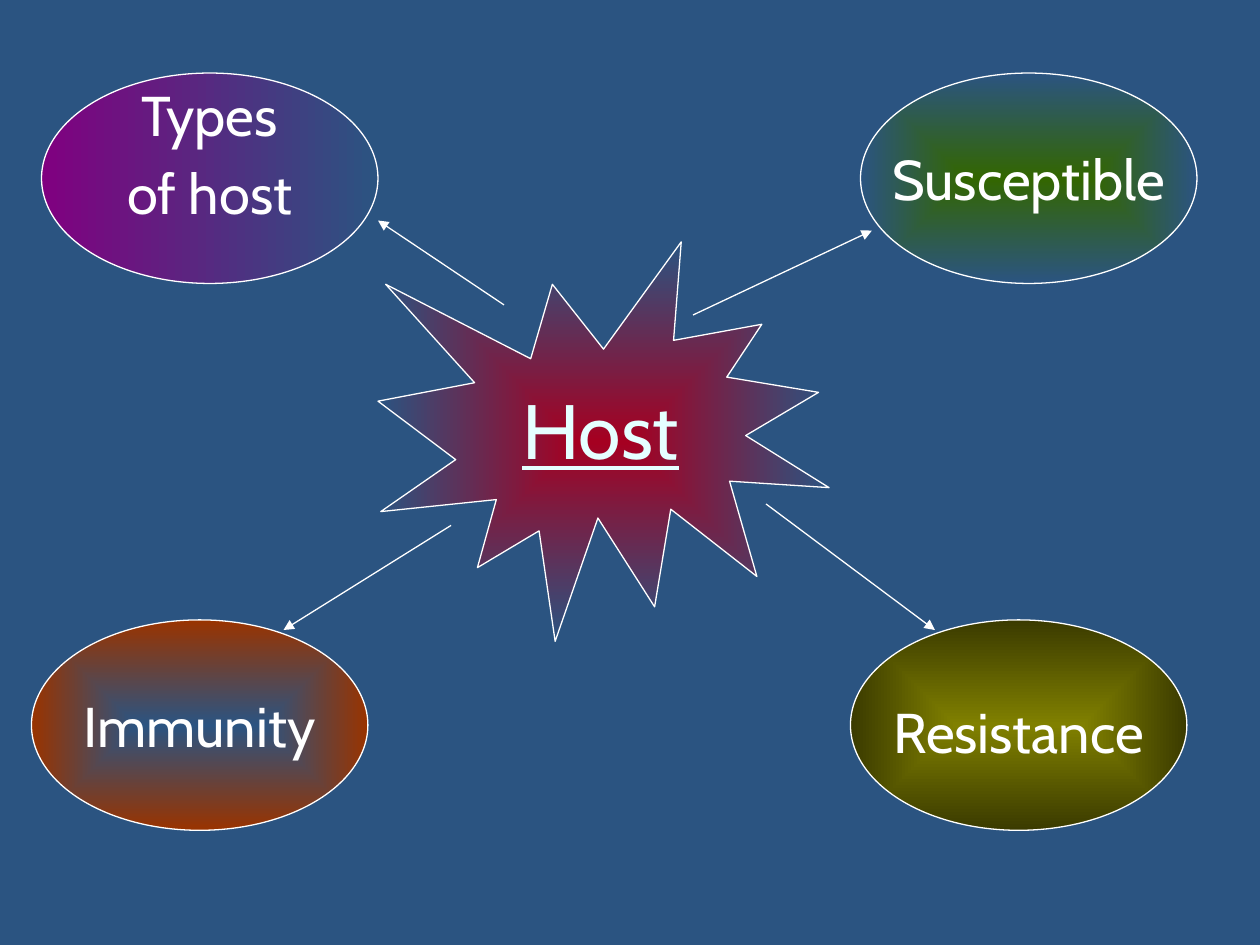
from dataclasses import dataclass

import lxml.etree
import pptx
import pptx.dml.color
import pptx.enum.shapes
import pptx.enum.text
import pptx.oxml
import pptx.oxml.ns
import pptx.util

Inches = pptx.util.Inches
Pt = pptx.util.Pt
SHAPE = pptx.enum.shapes.MSO_SHAPE
qn = pptx.oxml.ns.qn


def rgb(value):
    return pptx.dml.color.RGBColor.from_string(value)


@dataclass(frozen=True)
class Theme:
    font: str = "Cabin"
    background: str = "2B5481"
    outline: str = "FFFFFF"
    label: str = "FFFFFF"
    heading: str = "E5FFFF"
    crimson: str = "A50021"
    purple: str = "800080"
    rust: str = "993300"
    olive: str = "808000"
    dark_olive: str = "3B3B00"
    green: str = "336600"
    label_size: int = 32
    heading_size: int = 44
    line_width: float = 0.75


def write_text(frame, text, *, font, size, color, underline=None, raise_by=0, lower_by=0):
    frame.word_wrap = False
    frame.vertical_anchor = pptx.enum.text.MSO_ANCHOR.MIDDLE
    frame.margin_top = Inches(0.05 + lower_by)
    frame.margin_bottom = Inches(0.05 + raise_by)
    for index, line in enumerate(text.split("\n")):
        paragraph = frame.add_paragraph() if index else frame.paragraphs[0]
        paragraph.alignment = pptx.enum.text.PP_ALIGN.CENTER
        if index:
            paragraph.space_before = Pt(size * 0.2)
        run = paragraph.add_run()
        run.text = line
        run.font.name = font
        run.font.size = Pt(size)
        run.font.color.rgb = rgb(color)
        run.font.underline = underline


class Diagram:
    def __init__(self, slide, theme):
        self.slide = slide
        self.theme = theme
        slide.background.fill.solid()
        slide.background.fill.fore_color.rgb = rgb(theme.background)

    def outline(self, line):
        line.color.rgb = rgb(self.theme.outline)
        line.width = Pt(self.theme.line_width)

    def gradient(self, shape, colors, centred):
        shape.fill.gradient()
        for stop, color in zip(shape.fill.gradient_stops, colors):
            stop.color.rgb = rgb(color)
        shape.fill.gradient_angle = 0
        if centred:
            linear = shape.fill._xPr.find(".//" + qn("a:lin"))
            path = lxml.etree.Element(qn("a:path"), {"path": "shape"})
            lxml.etree.SubElement(path, qn("a:fillToRect"), dict.fromkeys("ltrb", "50000"))
            linear.getparent().replace(linear, path)

    def node(self, kind, box, colors, text, centred=True, **text_format):
        shape = self.slide.shapes.add_shape(kind, *map(Inches, box))
        shape.shadow.inherit = False
        self.gradient(shape, colors, centred)
        self.outline(shape.line)
        style = dict(font=self.theme.font, size=self.theme.label_size, color=self.theme.label)
        write_text(shape.text_frame, text, **(style | text_format))

    def topic(self, left, top, colors, text, **options):
        self.node(SHAPE.OVAL, (left, top, 2.67, 1.67), colors, text, **options)

    def arrow(self, start, end):
        connector = self.slide.shapes.add_connector(
            pptx.enum.shapes.MSO_CONNECTOR.STRAIGHT, *map(Inches, start + end))
        self.outline(connector.line)
        lxml.etree.SubElement(connector.line._get_or_add_ln(), qn("a:tailEnd"), {"type": "triangle"})
        lxml.etree.SubElement(connector._element.spPr, qn("a:effectLst"))


def main():
    presentation = pptx.Presentation()
    presentation.slide_width = Inches(10)
    presentation.slide_height = Inches(7.5)
    theme = Theme()
    diagram = Diagram(presentation.slides.add_slide(presentation.slide_layouts[6]), theme)
    backdrop = theme.background
    top_row, bottom_row = 0.58, 4.92

    diagram.node(SHAPE.EXPLOSION1, (3, 1.92, 3.58, 3.17), (theme.crimson, backdrop), "Host",
                 size=theme.heading_size, color=theme.heading, underline=True)
    diagram.topic(0.33, top_row, (theme.purple, backdrop), "Types\nof host",
                  centred=False, raise_by=0.4)
    diagram.topic(0.25, bottom_row, (backdrop, theme.rust), "Immunity")
    diagram.topic(6.75, bottom_row, (theme.olive, theme.dark_olive), "Resistance", lower_by=0.1)
    diagram.topic(6.83, top_row, (theme.green, backdrop), "Susceptible")

    for start, end in (
        ((6.08, 4), (7.42, 5)),
        ((3.58, 4.17), (2.25, 5)),
        ((5.5, 2.5), (6.92, 1.83)),
        ((4, 2.42), (3, 1.75)),
    ):
        diagram.arrow(start, end)

    presentation.save("out.pptx")


if __name__ == "__main__":
    main()
